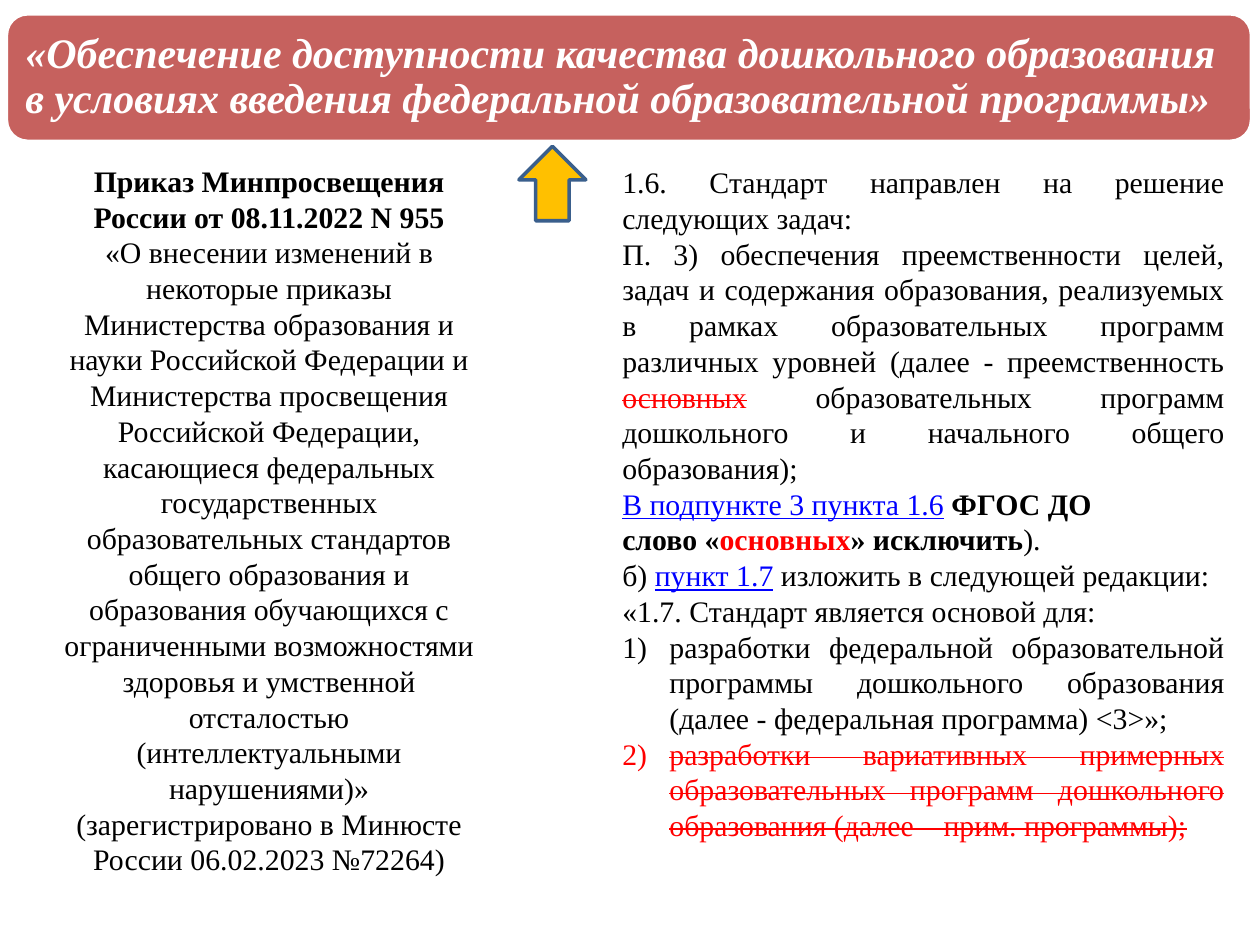
from lxml import etree
from pptx import Presentation
from pptx.dml.color import RGBColor
from pptx.enum.shapes import MSO_SHAPE as Shape
from pptx.enum.text import MSO_ANCHOR as Anchor, MSO_AUTO_SIZE as AutoSize, PP_ALIGN as Align
from pptx.oxml.ns import qn
from pptx.util import Cm, Pt

FONT = "Times New Roman"
BLACK, WHITE, RED, BLUE = "000000", "FFFFFF", "FF0000", "0000FF"
STRUCK = dict(color=RED, strike=True)
LINK = dict(color=BLUE, underline=True)

TITLE = ("«Обеспечение доступности качества дошкольного образования "
         "в условиях введения федеральной образовательной программы»")
ORDER = [
    ("Приказ Минпросвещения России от 08.11.2022 N 955", dict(bold=True)),
    ("«О внесении изменений в некоторые приказы Министерства образования и науки "
     "Российской Федерации и Министерства просвещения Российской Федерации, касающиеся "
     "федеральных государственных образовательных стандартов общего образования и "
     "образования обучающихся с ограниченными возможностями здоровья и умственной "
     "отсталостью (интеллектуальными нарушениями)»", {}),
    ("(зарегистрировано в Минюсте России 06.02.2023 №72264)", {}),
]
CHANGES = [
    [("1.6. Стандарт направлен на решение следующих задач:", {})],
    [("П. 3) обеспечения преемственности целей, задач и содержания образования, "
      "реализуемых в рамках образовательных программ различных уровней "
      "(далее - преемственность ", {}),
     ("основных", STRUCK),
     (" образовательных программ дошкольного и начального общего образования);", {})],
    [("В подпункте 3 пункта 1.6", LINK), (" ", {}), ("ФГОС ДО", dict(bold=True))],
    [("слово «", dict(bold=True)), ("основных", dict(bold=True, color=RED)),
     ("» исключить", dict(bold=True)), (").", {})],
    [("б) ", {}), ("пункт 1.7", LINK), (" изложить в следующей редакции:", {})],
    [("«1.7. Стандарт является основой для:", {})],
]
TASKS = [
    ("разработки федеральной образовательной программы дошкольного образования "
     "(далее - федеральная программа) <3>»;", {}),
    ("разработки вариативных примерных образовательных программ дошкольного образования "
     "(далее – прим. программы);", STRUCK),
]


def rgb(value):
    return RGBColor.from_string(value)


def add_text(p, text, size=17, color=BLACK, bold=False, italic=False,
             underline=False, strike=False):
    r = p.add_run()
    r.text = text
    f = r.font
    f.name, f.size, f.bold, f.italic, f.underline = FONT, Pt(size), bold, italic, underline
    f.color.rgb = rgb(color)
    if strike:
        f._element.set("strike", "sngStrike")


def format_paragraph(p, align, numbered=False):
    p.alignment = align
    p.space_before = Pt(0)
    indent = Cm(0.95) if numbered else 0
    pPr = p._p.get_or_add_pPr()
    pPr.set("marL", str(indent))
    pPr.set("indent", str(-indent))
    if numbered:
        etree.SubElement(pPr, qn("a:buFontTx"))
        etree.SubElement(pPr, qn("a:buAutoNum")).set("type", "arabicParenR")
    else:
        etree.SubElement(pPr, qn("a:buNone"))


def place(sp, x, y, w, h):
    sp.left, sp.top, sp.width, sp.height = Cm(x), Cm(y), Cm(w), Cm(h)


def prepare_body(sp, box):
    place(sp, *box)
    tf = sp.text_frame
    tf.word_wrap = True
    tf.auto_size = AutoSize.NONE
    tf.vertical_anchor = Anchor.TOP
    return tf


def add_block(s, shape, box, fill, line):
    sp = s.shapes.add_shape(shape, *map(Cm, box))
    sp.shadow.inherit = False
    sp.fill.solid()
    sp.fill.fore_color.rgb = rgb(fill)
    sp.line.color.rgb = rgb(line)
    sp.line.width = Pt(2)
    return sp


def build_banner(s, x, y, w, h):
    sp = add_block(s, Shape.ROUNDED_RECTANGLE, (x, y, w, h), "C0504D", WHITE)
    color = sp.fill._xPr.find(qn("a:solidFill"))[0]
    etree.SubElement(color, qn("a:alpha")).set("val", "90000")
    sp.element.getparent().insert(2, sp.element)

    title = s.shapes.title
    pad = 0.13
    place(title, x + pad, y + pad, w - 2 * pad, h - 2 * pad)
    tf = title.text_frame
    tf.word_wrap = True
    tf.auto_size = AutoSize.NONE
    tf.vertical_anchor = Anchor.MIDDLE
    tf.margin_left = tf.margin_right = tf.margin_top = tf.margin_bottom = Cm(0.25)
    p = tf.paragraphs[0]
    p.alignment = Align.LEFT
    p.line_spacing = 0.9
    add_text(p, TITLE, size=24, color=WHITE, bold=True, italic=True)


def build_order(sp, *box):
    p = prepare_body(sp, box).paragraphs[0]
    format_paragraph(p, Align.CENTER)
    for i, (text, fmt) in enumerate(ORDER):
        if i:
            p.add_line_break()
        add_text(p, text, **fmt)


def build_changes(sp, *box):
    tf = prepare_body(sp, box)
    rows = [(runs, False) for runs in CHANGES] + [([task], True) for task in TASKS]
    for i, (runs, numbered) in enumerate(rows):
        p = tf.add_paragraph() if i else tf.paragraphs[0]
        format_paragraph(p, Align.JUSTIFY, numbered)
        for text, fmt in runs:
            add_text(p, text, **fmt)


def build_arrow(s, *box):
    sp = add_block(s, Shape.DOWN_ARROW, box, "FFC000", "3A5F8C")
    sp.rotation = 180


def main():
    prs = Presentation()
    prs.slide_width, prs.slide_height = Cm(25.4), Cm(19.05)
    s = prs.slides.add_slide(prs.slide_layouts[3])
    build_banner(s, 0.13, 0.28, 25.1, 2.57)
    build_changes(s.placeholders[2], 12.29, 3.18, 12.65, 14.07)
    build_order(s.placeholders[1], 0.89, 3.15, 9.07, 14.78)
    build_arrow(s, 10.46, 2.95, 1.35, 1.5)
    prs.save("out.pptx")


if __name__ == "__main__":
    main()
